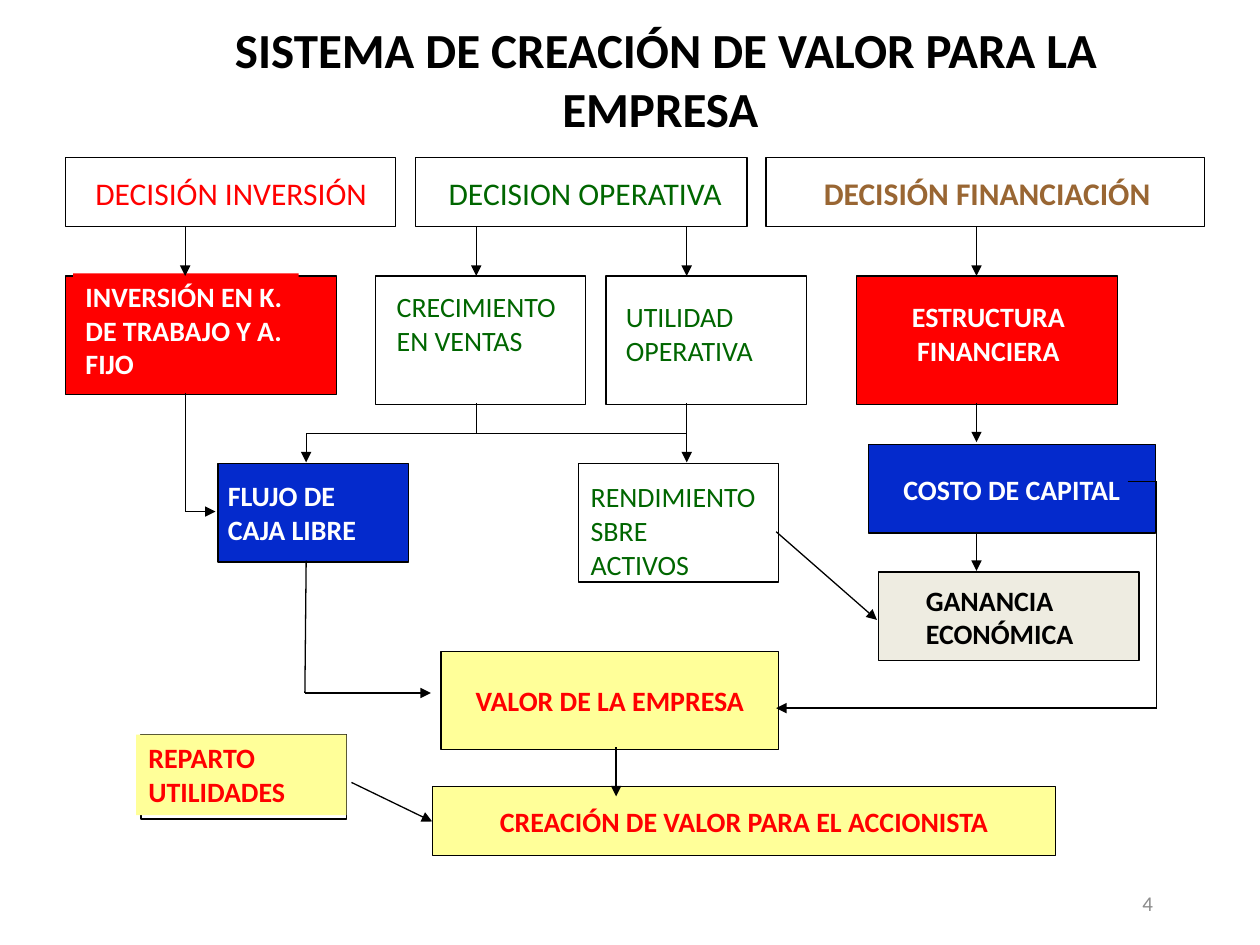
from dataclasses import dataclass
from typing import Optional

from lxml.etree import SubElement
from pptx import Presentation
from pptx.dml.color import RGBColor
from pptx.enum.shapes import MSO_CONNECTOR, MSO_SHAPE
from pptx.enum.text import MSO_ANCHOR, PP_ALIGN
from pptx.oxml.ns import qn
from pptx.util import Inches, Pt

# The grid has 100 columns and 75 rows of square cells.
SLIDE_WIDTH, SLIDE_HEIGHT = Inches(10), Inches(7.5)
COLUMN, ROW = SLIDE_WIDTH / 100, SLIDE_HEIGHT / 75


@dataclass(frozen=True)
class Theme:
    font: str = "Calibri"
    black: str = "000000"
    white: str = "FFFFFF"
    red: str = "FF0000"
    green: str = "006600"
    brown: str = "996633"
    blue: str = "042ACC"
    yellow: str = "FFFF99"
    beige: str = "EEECE1"
    gray: str = "8C8C8C"
    title: int = 28
    heading: int = 18
    body: int = 16
    number: int = 12
    line: float = 0.75


THEME = Theme()


@dataclass(frozen=True)
class Area:
    """A rectangle in grid columns and rows."""
    left: float
    top: float
    width: float
    height: float

    def lengths(self) -> tuple:
        return (round(self.left * COLUMN), round(self.top * ROW),
                round(self.width * COLUMN), round(self.height * ROW))


@dataclass(frozen=True)
class Box:
    area: Area
    fill: Optional[str] = None
    outlined: bool = True


@dataclass(frozen=True)
class Label:
    area: Area
    text: str
    color: str
    bold: bool = True
    size: int = THEME.body
    align: PP_ALIGN = PP_ALIGN.LEFT
    anchor: MSO_ANCHOR = MSO_ANCHOR.TOP


@dataclass(frozen=True)
class Route:
    """A chain of straight segments through grid points."""
    points: tuple
    arrow: bool = True


def centered(area: Area, text: str, color: str, bold: bool = True,
             size: int = THEME.body, anchor: MSO_ANCHOR = MSO_ANCHOR.MIDDLE) -> Label:
    return Label(area, text, color, bold, size, PP_ALIGN.CENTER, anchor)


def heading(area: Area, text: str, color: str, bold: bool = False) -> Label:
    return centered(area, text, color, bold, THEME.heading, MSO_ANCHOR.TOP)


INVESTMENT = Area(5.2, 21.9, 21.5, 9.4)
COST = Area(68.9, 35.3, 22.8, 7)
COMPANY_VALUE = Area(35, 51.7, 26.8, 7.8)
SHAREHOLDER_VALUE = Area(34.3, 62.4, 49.5, 5.5)
PAYOUT = Area(10.8, 58.3, 16.7, 6.4)

BOXES = (
    Box(Area(5.2, 12.5, 26.2, 5.5)),
    Box(Area(33, 12.5, 26.3, 5.5)),
    Box(Area(60.8, 12.5, 34.8, 5.5)),
    Box(INVESTMENT, THEME.red),
    Box(Area(5.8, 21.7, 17.9, 9.1), THEME.red, outlined=False),
    Box(Area(29.8, 21.9, 16.7, 10.2)),
    Box(Area(48.1, 21.9, 15.9, 10.2)),
    Box(Area(68, 21.9, 20.7, 10.2), THEME.red),
    Box(Area(17.3, 36.8, 15.1, 7.8), THEME.blue),
    Box(Area(45.9, 36.8, 15.9, 9.4)),
    Box(COST, THEME.blue),
    Box(Area(69.7, 45.4, 20.7, 7), THEME.beige),
    Box(Area(11.2, 58.3, 16.3, 6.7)),
    Box(PAYOUT, THEME.yellow, outlined=False),
    Box(COMPANY_VALUE, THEME.yellow),
    Box(SHAREHOLDER_VALUE, THEME.yellow),
)

LABELS = (
    heading(Area(5, 13.3, 26.7, 4), "DECISIÓN INVERSIÓN", THEME.red),
    heading(Area(34.3, 13.3, 24.3, 4), "DECISION OPERATIVA", THEME.green),
    heading(Area(64.2, 13.3, 28.3, 4), "DECISIÓN FINANCIACIÓN", THEME.brown, bold=True),
    Label(Area(5.8, 21.7, 17.9, 9.1), "INVERSIÓN EN K.\nDE TRABAJO Y A.\nFIJO", THEME.white),
    Label(Area(30.5, 22.5, 17.2, 6.4), "CRECIMIENTO\nEN VENTAS", THEME.green, bold=False),
    Label(Area(48.7, 23.3, 14.6, 6.4), "UTILIDAD\nOPERATIVA", THEME.green, bold=False),
    centered(Area(68.6, 23.3, 19.7, 6.4), "ESTRUCTURA\nFINANCIERA", THEME.white,
             anchor=MSO_ANCHOR.TOP),
    Label(Area(17.1, 37.5, 15.4, 6.4), "FLUJO DE\nCAJA LIBRE", THEME.white),
    Label(Area(45.9, 37.6, 17.4, 9), "RENDIMIENTO\nSBRE\nACTIVOS", THEME.green, bold=False),
    centered(COST, "COSTO DE CAPITAL", THEME.white),
    Label(Area(72.5, 45.8, 16.3, 6.4), "GANANCIA\nECONÓMICA", THEME.black),
    Label(PAYOUT, "REPARTO\nUTILIDADES", THEME.red),
    centered(COMPANY_VALUE, "VALOR DE LA EMPRESA", THEME.red),
    centered(SHAREHOLDER_VALUE, "CREACIÓN DE VALOR PARA EL ACCIONISTA", THEME.red),
    Label(Area(71.7, 69.2, 20.8, 5), "4", THEME.gray, False, THEME.number,
          PP_ALIGN.RIGHT, MSO_ANCHOR.MIDDLE),
)

DECISION_DROPS = tuple(Route(((column, 18), (column, 21.9)))
                       for column in (14.7, 37.8, 54.5, 77.5))
ROUTES = DECISION_DROPS + (
    Route(((14.7, 31.2), (14.7, 40.6), (17.1, 40.6))),
    Route(((37.8, 32), (37.8, 34.4)), arrow=False),
    Route(((54.5, 34.4), (24.3, 34.4), (24.3, 36.7))),
    Route(((54.5, 32), (54.5, 36.7))),
    Route(((77.5, 32), (77.5, 35.1))),
    Route(((77.5, 42.2), (77.5, 45.3))),
    Route(((61.6, 42.2), (69.6, 49.2))),
    Route(((24.3, 44.5), (24.2, 55), (34.2, 55))),
    Route(((89.5, 38.2), (91.8, 38.2), (91.8, 56.2), (61.6, 56.2))),
    Route(((48.9, 59.3), (48.9, 63.2))),
    Route(((27.9, 62.1), (34.3, 65.2))),
)


def rgb(color: str) -> RGBColor:
    return RGBColor.from_string(color)


def write(shape, label: Label) -> None:
    frame = shape.text_frame
    frame.text = label.text
    frame.word_wrap = True
    frame.vertical_anchor = label.anchor
    for para in frame.paragraphs:
        para.alignment = label.align
        for span in para.runs:
            span.font.name = THEME.font
            span.font.size = Pt(label.size)
            span.font.bold = label.bold
            span.font.color.rgb = rgb(label.color)


def draw_box(page, box: Box) -> None:
    shape = page.shapes.add_shape(MSO_SHAPE.RECTANGLE, *box.area.lengths())
    shape.shadow.inherit = False
    if box.fill:
        shape.fill.solid()
        shape.fill.fore_color.rgb = rgb(box.fill)
    else:
        shape.fill.background()
    if box.outlined:
        shape.line.color.rgb = rgb(THEME.black)
        shape.line.width = Pt(THEME.line)
    else:
        shape.line.fill.background()


def draw_route(page, route: Route) -> None:
    for start, end in zip(route.points, route.points[1:]):
        ends = [round(value * unit) for point in (start, end)
                for value, unit in zip(point, (COLUMN, ROW))]
        segment = page.shapes.add_connector(MSO_CONNECTOR.STRAIGHT, *ends)
        segment.line.color.rgb = rgb(THEME.black)
        segment.line.width = Pt(THEME.line)
        if route.arrow and end == route.points[-1]:
            SubElement(segment.line._get_or_add_ln(), qn("a:tailEnd"), type="triangle")
        SubElement(segment._element.spPr, qn("a:effectLst"))


def main() -> None:
    deck = Presentation()
    deck.slide_width, deck.slide_height = SLIDE_WIDTH, SLIDE_HEIGHT
    page = deck.slides.add_slide(deck.slide_layouts[5])
    title = centered(Area(9.9, 0, 85, 12.5), " SISTEMA DE CREACIÓN DE VALOR PARA LA EMPRESA",
                     THEME.black, size=THEME.title)
    heading_shape = page.shapes.title
    (heading_shape.left, heading_shape.top,
     heading_shape.width, heading_shape.height) = title.area.lengths()
    write(heading_shape, title)
    for box in BOXES:
        draw_box(page, box)
    for label in LABELS:
        write(page.shapes.add_textbox(*label.area.lengths()), label)
    for route in ROUTES:
        draw_route(page, route)
    deck.save("out.pptx")


if __name__ == "__main__":
    main()
